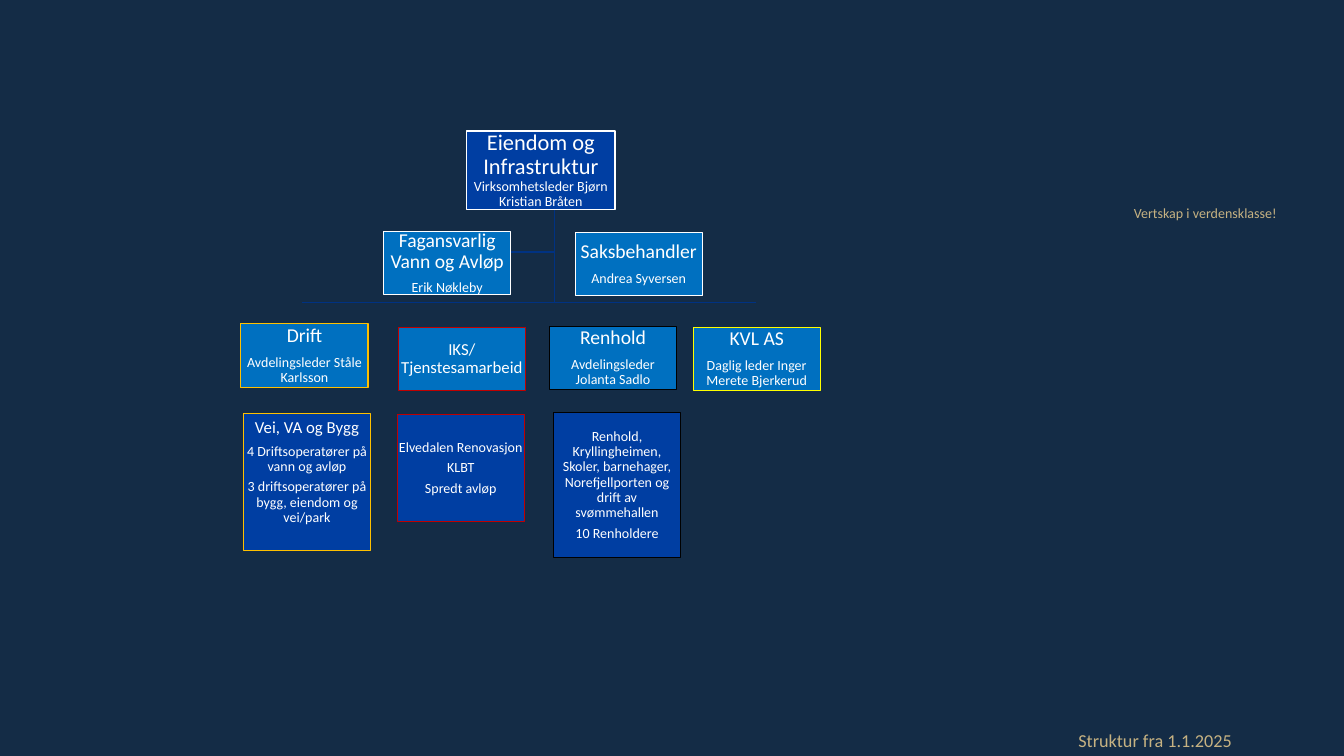
from dataclasses import dataclass

from pptx import Presentation
from pptx import util as u
from pptx.dml.color import RGBColor
from pptx.enum import shapes, text


class Theme:
    font = "Calibri"
    background = "142C46"
    gold = "C6B282"
    white = "FFFFFF"
    dark_blue = "003EA2"
    light_blue = "0070C0"
    connector = "003282"
    yellow = "FFC000"
    red = "C00000"
    black = "000000"
    bright_yellow = "FFFF00"
    line_width = 1.5
    leader, heading, subheading, footer, body = 32, 28, 24, 26, 20


@dataclass
class Box:
    """One unit of the chart; each paragraph is a list of (text, size) runs."""
    left: float
    top: float
    paragraphs: list
    outline: str = Theme.white
    fill: str = Theme.light_blue
    width: float = 2.52
    height: float = 1.26
    bottom_inset: float = 0.02

    @property
    def center(self):
        return self.left + self.width / 2

    @property
    def middle(self):
        return self.top + self.height / 2

    @property
    def right(self):
        return self.left + self.width

    @property
    def bottom(self):
        return self.top + self.height


class SlideBuilder:
    def __init__(self, slide, theme):
        self.slide = slide
        self.theme = theme
        slide.background.fill.solid()
        slide.background.fill.fore_color.rgb = RGBColor.from_string(theme.background)

    def apply(self, target, values):
        for name, value in values.items():
            setattr(target, name, value)

    def outline(self, shape, color):
        shape.line.color.rgb = RGBColor.from_string(color)
        shape.line.width = u.Pt(self.theme.line_width)
        shape.shadow.inherit = False

    def fill_text(self, shape, paragraphs, color, frame_format, paragraph_format):
        frame = shape.text_frame
        self.apply(frame, {"word_wrap": True, "auto_size": text.MSO_AUTO_SIZE.NONE,
                           **frame_format})
        for index, runs in enumerate(paragraphs):
            paragraph = frame.add_paragraph() if index else frame.paragraphs[0]
            self.apply(paragraph, {"space_before": u.Pt(0), **paragraph_format})
            if index < len(paragraphs) - 1:
                paragraph.space_after = u.Pt(round(runs[0][1] * 0.42))
            for words, size in runs:
                run = paragraph.add_run()
                run.text = words
                self.apply(run.font, {"name": self.theme.font, "size": u.Pt(size)})
                run.font.color.rgb = RGBColor.from_string(color)

    def label(self, shape, words, size):
        insets = dict.fromkeys(
            ("margin_left", "margin_top", "margin_right", "margin_bottom"), 0)
        self.fill_text(shape, [[(words, size)]], self.theme.gold,
                       {"vertical_anchor": text.MSO_ANCHOR.TOP, **insets},
                       {"alignment": text.PP_ALIGN.LEFT, "line_spacing": 1.0})

    def text_box(self, left, top, width, height, words, size):
        shape = self.slide.shapes.add_textbox(
            *(u.Inches(value) for value in (left, top, width, height)))
        self.label(shape, words, size)

    def subtitle(self, left, top, width, height, words, size):
        title, subtitle = self.slide.placeholders
        title.element.getparent().remove(title.element)
        self.apply(subtitle, {"left": u.Inches(left), "top": u.Inches(top),
                              "width": u.Inches(width), "height": u.Inches(height)})
        self.label(subtitle, words, size)

    def branch(self, points):
        start, *rest = points
        builder = self.slide.shapes.build_freeform(*start, scale=u.Inches(1))
        builder.add_line_segments(rest, close=False)
        shape = builder.convert_to_shape()
        shape.fill.background()
        self.outline(shape, self.theme.connector)

    def box(self, box):
        shape = self.slide.shapes.add_shape(
            shapes.MSO_SHAPE.RECTANGLE,
            *(u.Inches(value) for value in (box.left, box.top, box.width, box.height)))
        shape.fill.solid()
        shape.fill.fore_color.rgb = RGBColor.from_string(box.fill)
        self.outline(shape, box.outline)
        inset = u.Inches(0.02)
        self.fill_text(shape, box.paragraphs, self.theme.white,
                       {"vertical_anchor": text.MSO_ANCHOR.MIDDLE, "margin_left": inset,
                        "margin_top": inset, "margin_right": inset,
                        "margin_bottom": u.Inches(box.bottom_inset)},
                       {"alignment": text.PP_ALIGN.CENTER, "line_spacing": 0.9})


def unit(heading, person):
    return [[(heading, Theme.heading)], [(person, Theme.body)]]


def listing(*lines):
    return [[(line, Theme.body)] for line in lines]


def main():
    presentation = Presentation()
    presentation.slide_width = u.Inches(26.66)
    presentation.slide_height = u.Inches(15)
    slide = presentation.slides.add_slide(presentation.slide_layouts[0])
    builder = SlideBuilder(slide, Theme)

    # Slogan and date
    builder.text_box(22.49, 4.06, 3.02, 0.34, "Vertskap i verdensklasse!", Theme.body)
    builder.subtitle(21.39, 14.48, 5.28, 0.44, "Struktur fra 1.1.2025", Theme.footer)

    # Units of the organisation
    leader = Box(9.26, 2.6, [[("Eiendom og Infrastruktur ", Theme.leader),
                              ("Virksomhetsleder Bjørn Kristian Bråten", Theme.body)]],
                 fill=Theme.dark_blue, width=2.94, height=1.56)
    water_adviser = Box(7.61, 4.59, unit("Fagansvarlig Vann og Avløp", "Erik Nøkleby"))
    case_officer = Box(11.41, 4.61, unit("Saksbehandler", "Andrea Syversen"))
    departments = [
        Box(4.78, 6.42, unit("Drift", "Avdelingsleder Ståle Karlsson"), Theme.yellow),
        Box(7.9, 6.49, [[("IKS/ Tjenstesamarbeid", Theme.subheading)]], Theme.red),
        Box(10.9, 6.47, unit("Renhold", "Avdelingsleder Jolanta Sadlo"), Theme.black),
        Box(13.75, 6.49, unit("KVL AS", "Daglig leder Inger Merete Bjerkerud"),
            Theme.bright_yellow),
    ]
    details = [
        Box(4.83, 8.2, [[("Vei, VA og Bygg", Theme.subheading)],
                        *listing("4 Driftsoperatører på vann og avløp",
                                 "3 driftsoperatører på bygg, eiendom og vei/park")],
            Theme.yellow, Theme.dark_blue, height=2.73, bottom_inset=0.42),
        Box(7.88, 8.23, listing("Elvedalen Renovasjon", "KLBT", "Spredt avløp"),
            Theme.red, Theme.dark_blue, height=2.12),
        Box(10.98, 8.19, listing("Renhold, Kryllingheimen, Skoler, barnehager, "
                                 "Norefjellporten og drift av svømmehallen",
                                 "10 Renholdere"),
            Theme.black, Theme.dark_blue, height=2.88),
    ]

    # Branches from the leader, behind the boxes
    start = (leader.center, leader.bottom)
    for side, y in ((case_officer.left, case_officer.middle),
                    (water_adviser.right, water_adviser.middle)):
        builder.branch([start, (leader.center, y), (side, y)])
    for department in departments:
        bend = department.top - 0.26
        builder.branch([start, (leader.center, bend), (department.center, bend),
                        (department.center, department.top)])

    # Boxes
    for box in (leader, *departments, water_adviser, case_officer, *details):
        builder.box(box)

    presentation.save("out.pptx")


if __name__ == "__main__":
    main()
